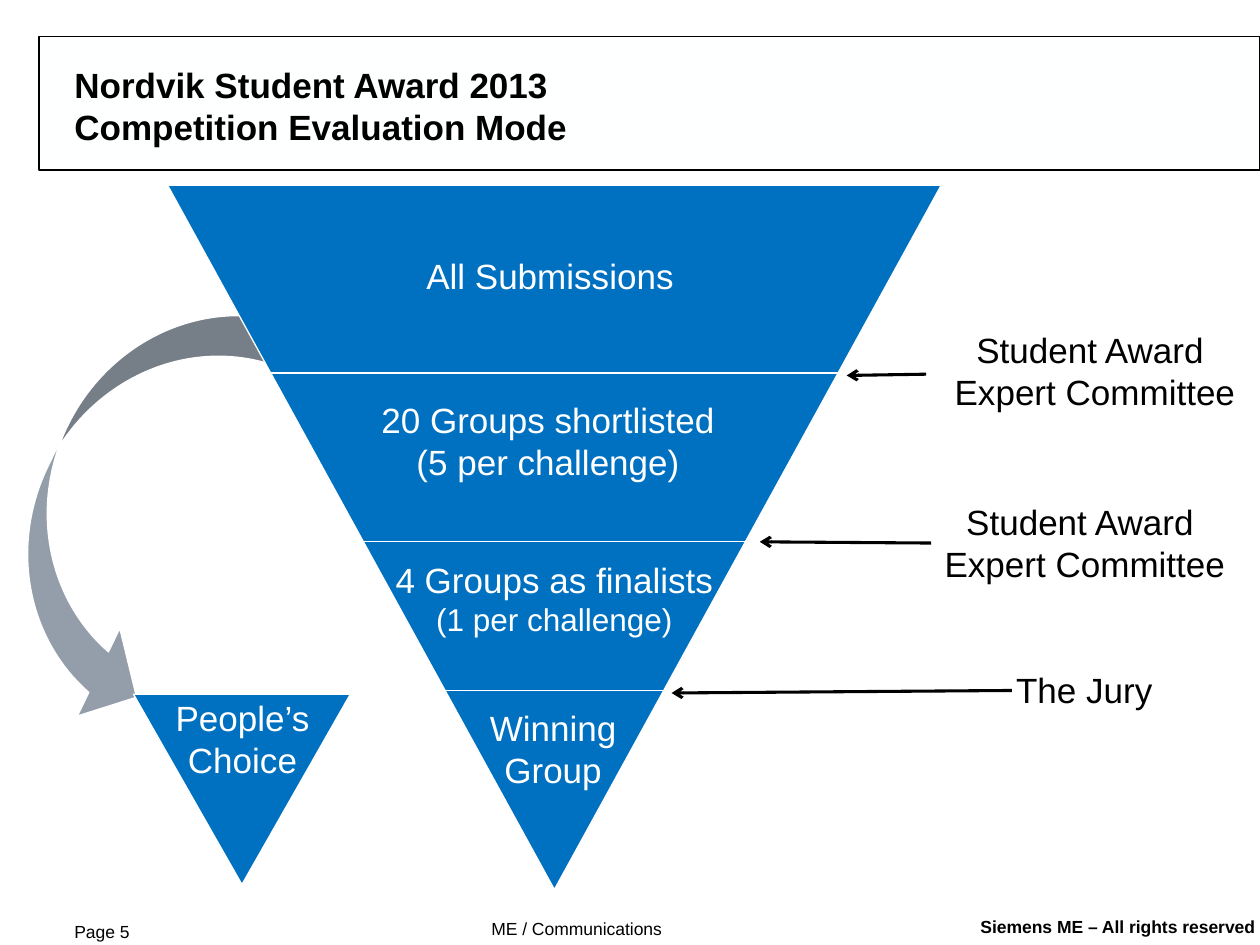
from lxml import etree
from pptx import Presentation
from pptx.dml.color import RGBColor
from pptx.enum.shapes import MSO_CONNECTOR, MSO_SHAPE
from pptx.enum.text import MSO_ANCHOR, PP_ALIGN
from pptx.oxml.ns import qn
from pptx.util import Inches, Pt

BLACK, WHITE, BLUE, GREY = "000000", "FFFFFF", "0070C0", "949EAA"


def colour(value):
    return RGBColor.from_string(value)


class SlideWriter:
    """Holds the font and the slide that is being filled."""

    def __init__(self, slide, font="Arial"):
        self.slide = slide
        self.font = font

    def shape(self, preset, left, top, width, height, fill, line=WHITE,
              rotation=0, adjustments=()):
        shape = self.slide.shapes.add_shape(
            preset, Inches(left), Inches(top), Inches(width), Inches(height))
        shape.shadow.inherit = False
        shape.rotation = rotation
        for index, value in enumerate(adjustments):
            shape.adjustments[index] = value
        shape.fill.solid()
        shape.fill.fore_color.rgb = colour(fill)
        shape.line.color.rgb = colour(line)
        shape.line.width = Pt(0.75)

    def text(self, lines, left, top, width, height, sizes, ink=BLACK,
             bold=False, align=PP_ALIGN.LEFT):
        """Add a text box with one paragraph for each line and size."""
        box = self.slide.shapes.add_textbox(
            Inches(left), Inches(top), Inches(width), Inches(height))
        frame = box.text_frame
        for index, (line, size) in enumerate(zip(lines, sizes)):
            para = frame.add_paragraph() if index else frame.paragraphs[0]
            para.text = line
            para.alignment = align
            para.font.name = self.font
            para.font.size = Pt(size)
            para.font.bold = bold
            para.font.color.rgb = colour(ink)
        return frame

    def label(self, lines, left, top, width, height, ink, sizes=(20, 20)):
        """Add centred text that does not wrap."""
        frame = self.text(lines, left, top, width, height, sizes, ink,
                          align=PP_ALIGN.CENTER)
        frame.word_wrap = False

    def bottom_text(self, lines, left, top, width, height, size, **style):
        """Add text without margins that stands on the bottom of its box."""
        frame = self.text(lines, left, top, width, height,
                          [size] * len(lines), **style)
        frame.word_wrap = True
        frame.vertical_anchor = MSO_ANCHOR.BOTTOM
        frame.margin_left = frame.margin_right = 0
        frame.margin_top = frame.margin_bottom = 0

    def line(self, start, end, ink, width, arrow=False):
        line = self.slide.shapes.add_connector(
            MSO_CONNECTOR.STRAIGHT, *map(Inches, start + end))
        line.line.color.rgb = colour(ink)
        line.line.width = Pt(width)
        if arrow:
            outline = line.line._get_or_add_ln()
            etree.SubElement(outline, qn("a:tailEnd"), type="arrow")
        etree.SubElement(line._element.spPr, qn("a:effectLst"))


def main():
    deck = Presentation()
    deck.slide_width, deck.slide_height = Inches(10), Inches(7.5)
    page = SlideWriter(deck.slides.add_slide(deck.slide_layouts[6]))

    page.shape(MSO_SHAPE.RECTANGLE, 0.31, 0.29, 9.69, 1.06, "FEFFFF", BLACK)
    page.bottom_text(["Nordvik Student Award 2013\vCompetition Evaluation Mode"],
                     0.59, 0.28, 6.72, 0.89, 20, bold=True)

    page.shape(MSO_SHAPE.CURVED_RIGHT_ARROW, 0.34, 2.15, 1.43, 3.6, GREY,
               rotation=25.8, adjustments=(0.25, 0.54, 0.25))
    for triangle in ((1.33, 1.47, 6.14, 5.59), (1.06, 5.51, 1.72, 1.51)):
        page.shape(MSO_SHAPE.ISOSCELES_TRIANGLE, *triangle, BLUE, rotation=180)

    for left, right, y in ((1.86, 6.95, 2.96), (2.04, 6.85, 4.3),
                           (2.12, 6.92, 5.48)):
        page.line((left, y), (right, y), WHITE, 0.75)

    page.label(["All Submissions"], 3.27, 1.97, 2.19, 0.44, WHITE)
    page.label(["20 Groups shortlisted", "(5 per challenge)"],
               2.92, 3.11, 2.86, 0.77, WHITE)
    page.label(["4 Groups as finalists", "(1 per challenge)"],
               3.03, 4.38, 2.74, 0.74, WHITE, sizes=(20, 18))
    page.label(["Winning", "Group"], 3.78, 5.56, 1.22, 0.77, WHITE)
    page.label(["People’s", "Choice"], 1.29, 5.48, 1.27, 0.77, WHITE)

    committee = ["Student Award ", "Expert Committee"]
    page.label(committee, 7.47, 2.56, 2.44, 0.77, BLACK)
    page.label(committee, 7.39, 3.92, 2.44, 0.77, BLACK)
    page.label(["The Jury"], 7.96, 5.26, 1.29, 0.44, BLACK)
    for start, end in (((7.35, 2.97), (6.72, 2.98)),
                       ((7.39, 4.31), (6.03, 4.3)),
                       ((8.03, 5.48), (5.33, 5.5))):
        page.line(start, end, BLACK, 1.75, arrow=True)

    page.bottom_text(["Page 5"], 0.59, 7.18, 0.96, 0.3, 10)
    page.bottom_text(["ME / Communications"], 3.9, 7.15, 2.56, 0.3, 10)
    page.bottom_text(["Siemens ME – All rights reserved"], 1, 7.14, 8.96, 0.3,
                     10, bold=True, align=PP_ALIGN.RIGHT)
    deck.save("out.pptx")


if __name__ == "__main__":
    main()
